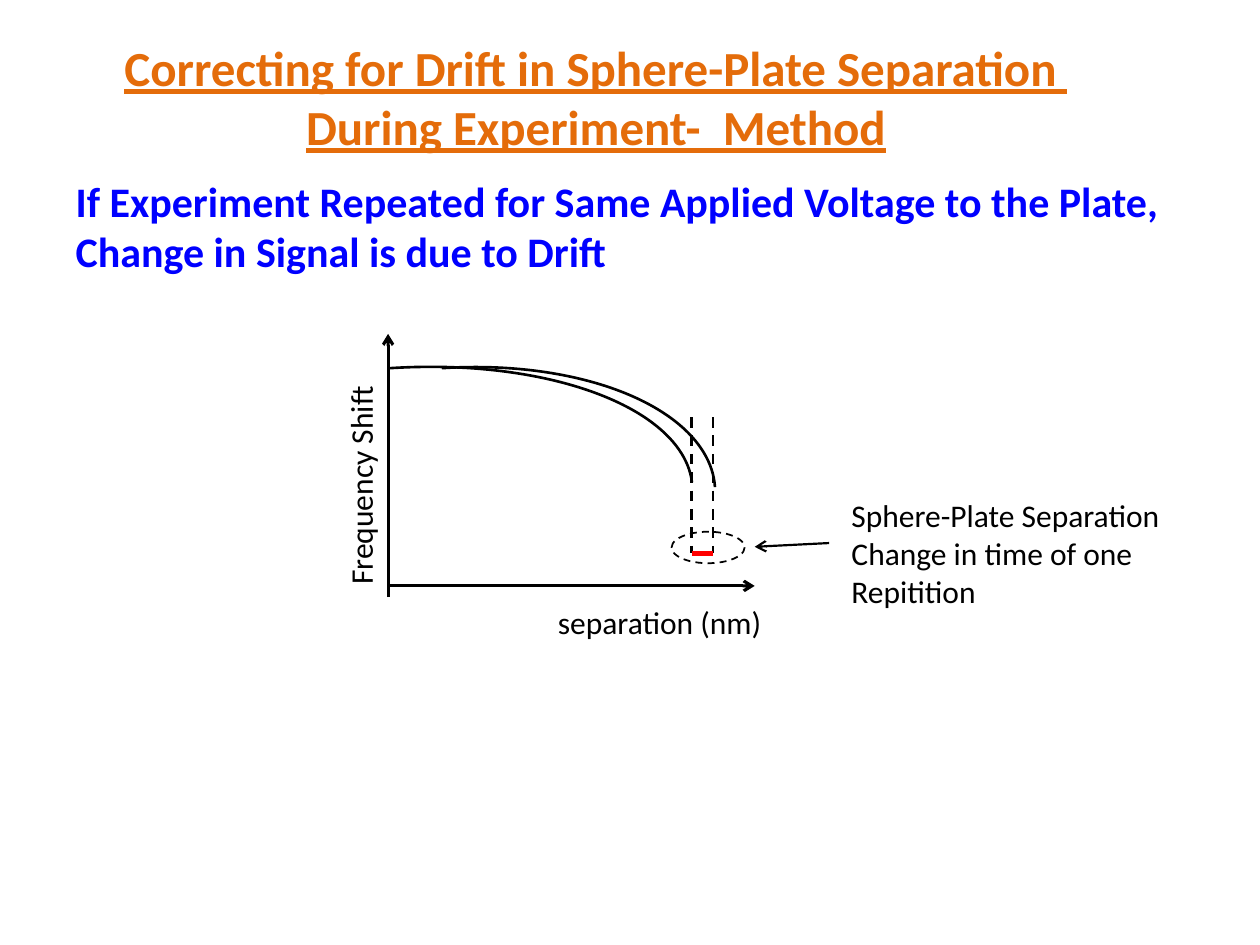
from dataclasses import dataclass

from lxml import etree
from pptx import Presentation
from pptx.dml.color import RGBColor
from pptx.enum.dml import MSO_LINE
from pptx.enum.shapes import MSO_CONNECTOR, MSO_SHAPE
from pptx.enum.text import MSO_ANCHOR, MSO_AUTO_SIZE, PP_ALIGN
from pptx.oxml.ns import qn
from pptx.util import Inches, Pt

STRAIGHT = MSO_CONNECTOR.STRAIGHT
ARC, ELLIPSE = MSO_SHAPE.ARC, MSO_SHAPE.OVAL
DASH = MSO_LINE.DASH
LEFT, CENTER, JUSTIFY = PP_ALIGN.LEFT, PP_ALIGN.CENTER, PP_ALIGN.JUSTIFY
TOP = MSO_ANCHOR.TOP
RESIZE_SHAPE = MSO_AUTO_SIZE.SHAPE_TO_FIT_TEXT


@dataclass(frozen=True)
class Theme:
    font: str = "Calibri"
    title_color: RGBColor = RGBColor(0xE4, 0x6C, 0x0A)
    body_color: RGBColor = RGBColor(0x00, 0x00, 0xFF)
    ink: RGBColor = RGBColor(0x00, 0x00, 0x00)
    drift: RGBColor = RGBColor(0xFF, 0x00, 0x00)
    title_size: int = 28
    body_size: int = 24
    label_size: int = 18


THEME = Theme()


@dataclass(frozen=True)
class Box:
    left: float
    top: float
    width: float
    height: float

    def lengths(self) -> tuple:
        return tuple(map(Inches, (self.left, self.top, self.width, self.height)))


@dataclass(frozen=True)
class Stroke:
    start: tuple[float, float]
    end: tuple[float, float]
    width: float
    color: RGBColor = THEME.ink
    dashed: bool = False
    arrow: bool = False


@dataclass(frozen=True)
class Outline:
    preset: int
    box: Box
    width: float
    rotation: float = 0
    adjustments: tuple[float, ...] = ()
    dashed: bool = False


@dataclass(frozen=True)
class Label:
    box: Box
    lines: tuple[str, ...]
    rotation: float = 0


def place(shape, box: Box) -> None:
    shape.left, shape.top, shape.width, shape.height = box.lengths()


def write_lines(frame, lines: tuple[str, ...], size: int, color: RGBColor,
                align=LEFT, bold: bool = False, underline: bool = False,
                wrap: bool = False) -> None:
    frame.word_wrap = wrap
    frame.auto_size = RESIZE_SHAPE
    frame.vertical_anchor = TOP
    for index, line in enumerate(lines):
        paragraph = frame.add_paragraph() if index else frame.paragraphs[0]
        paragraph.alignment = align
        paragraph.space_before = Pt(0)
        run = paragraph.add_run()
        run.text = line
        run.font.name = THEME.font
        run.font.size = Pt(size)
        run.font.bold = bold
        run.font.underline = underline
        run.font.color.rgb = color


def remove_bullets(frame) -> None:
    for paragraph in frame.paragraphs:
        properties = paragraph._p.get_or_add_pPr()
        properties.set("marL", "0")
        properties.set("indent", "0")
        etree.SubElement(properties, qn("a:buNone"))


def style_line(line, width: float, color: RGBColor, dashed: bool) -> None:
    line.width = Pt(width)
    line.color.rgb = color
    if dashed:
        line.dash_style = DASH


def draw_stroke(slide, stroke: Stroke) -> None:
    connector = slide.shapes.add_connector(
        STRAIGHT, *map(Inches, stroke.start + stroke.end))
    style_line(connector.line, stroke.width, stroke.color, stroke.dashed)
    properties = connector._element.spPr
    if stroke.arrow:
        etree.SubElement(properties.find(qn("a:ln")), qn("a:tailEnd"), type="arrow")
    etree.SubElement(properties, qn("a:effectLst"))


def draw_outline(slide, outline: Outline) -> None:
    shape = slide.shapes.add_shape(outline.preset, *outline.box.lengths())
    shape.shadow.inherit = False
    shape.fill.background()
    shape.rotation = outline.rotation
    for index, value in enumerate(outline.adjustments):
        shape.adjustments[index] = value
    style_line(shape.line, outline.width, THEME.ink, outline.dashed)


def draw_label(slide, label: Label) -> None:
    text_box = slide.shapes.add_textbox(*label.box.lengths())
    text_box.rotation = label.rotation
    write_lines(text_box.text_frame, label.lines, THEME.label_size, THEME.ink)


# Plot geometry
ORIGIN_X, AXIS_Y = 3.08, 4.65
FIRST_X, SECOND_X = 5.49, 5.66
MARK_TOP, MARK_BOTTOM = 3.31, 4.39
TILT = -3.8

CURVES = (
    Outline(ARC, Box(1.48, 2.92, 4.2, 2.17), 1.5, TILT),
    Outline(ARC, Box(0.82, 2.92, 4.68, 2.18), 1.5, TILT, (162, 215.59)),
)
AXES = (
    Stroke((ORIGIN_X, AXIS_Y), (5.99, AXIS_Y), 1.75, arrow=True),
    Stroke((ORIGIN_X, 4.74), (ORIGIN_X, 2.65), 1.75, arrow=True),
)
DRIFT_MARKS = tuple(
    Stroke((x, MARK_TOP), (x, MARK_BOTTOM), 1.5, dashed=True)
    for x in (FIRST_X, SECOND_X)
) + (Stroke((FIRST_X, MARK_BOTTOM), (SECOND_X, MARK_BOTTOM), 2.75, THEME.drift),)
DRIFT_RING = Outline(ELLIPSE, Box(5.33, 4.22, 0.58, 0.25), 1, dashed=True)
DRIFT_POINTER = Stroke((6.58, 4.31), (5.99, 4.34), 1.25, arrow=True)
LABELS = (
    Label(Box(4.33, 4.74, 1.84, 0.4), ("separation (nm)",)),
    Label(Box(6.66, 3.89, 2.73, 1.01),
          ("Sphere-Plate Separation", "Change in time of one", "Repitition")),
    Label(Box(1.96, 3.64, 1.8, 0.4), ("Frequency Shift",), 270),
)


def main() -> None:
    deck = Presentation()
    deck.slide_width, deck.slide_height = Inches(10), Inches(7.5)
    slide = deck.slides.add_slide(deck.slide_layouts[1])

    # Title and statement
    title, statement = slide.shapes.title, slide.placeholders[1]
    place(title, Box(0.83, 0.25, 7.8, 1.04))
    write_lines(title.text_frame,
                ("Correcting for Drift in Sphere-Plate Separation ",
                 "During Experiment-  Method"),
                THEME.title_size, THEME.title_color, CENTER,
                bold=True, underline=True)
    place(statement, Box(0.5, 1.34, 10, 0.91))
    write_lines(statement.text_frame,
                ("If Experiment Repeated for Same Applied Voltage to the Plate, ",
                 "Change in Signal is due to Drift"),
                THEME.body_size, THEME.body_color, JUSTIFY, bold=True, wrap=True)
    remove_bullets(statement.text_frame)

    # Curves, axes and drift marks
    for curve in CURVES:
        draw_outline(slide, curve)
    for stroke in AXES + DRIFT_MARKS:
        draw_stroke(slide, stroke)

    # Callout and labels
    draw_outline(slide, DRIFT_RING)
    draw_stroke(slide, DRIFT_POINTER)
    for label in LABELS:
        draw_label(slide, label)

    deck.save("out.pptx")


if __name__ == "__main__":
    main()
